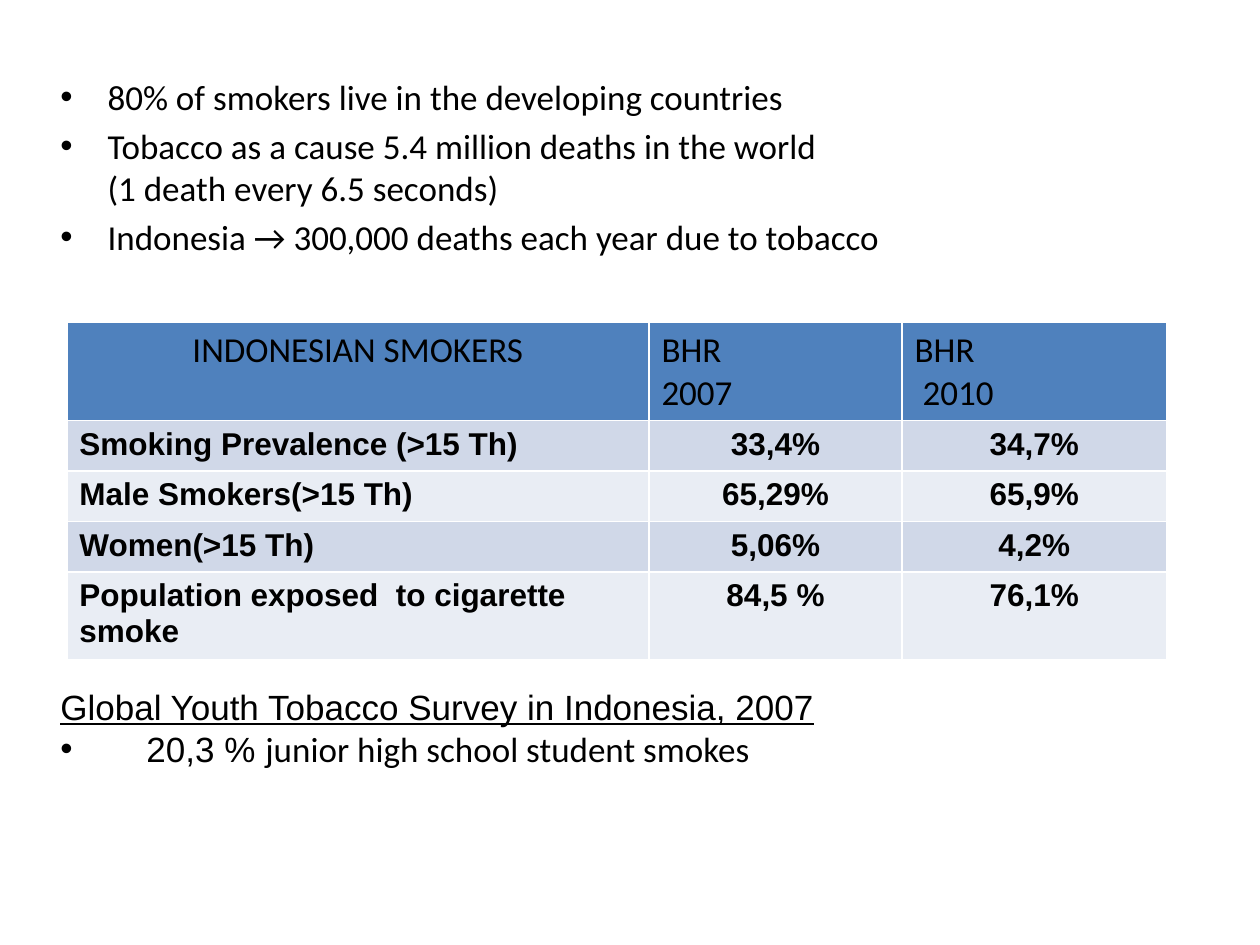
from dataclasses import dataclass

from lxml import etree
from pptx import Presentation
from pptx.dml.color import RGBColor
from pptx.enum import text as t
from pptx.oxml import ns
from pptx.util import Pt


@dataclass(frozen=True)
class Theme:
    ink: str = "000000"
    header: str = "4F81BD"
    bands: tuple = ("D0D8E8", "E9EDF4")
    border: str = "FFFFFF"
    border_width: float = 1
    heading_font: str = "Calibri"
    data_font: str = "Arial"
    body_size: float = 20
    data_size: float = 18
    indent: float = 27


THEME = Theme()
FACTS = (
    "80% of smokers live in the developing countries",
    "Tobacco as a cause 5.4 million deaths in the world\n(1 death every 6.5 seconds)",
    "Indonesia → 300,000 deaths each year due to tobacco",
)
HEADERS = ("INDONESIAN SMOKERS", "BHR\n2007", "BHR\n 2010")
SMOKERS = (
    ("Smoking Prevalence (>15 Th)", "33,4%", "34,7%"),
    ("Male Smokers(>15 Th)", "65,29%", "65,9%"),
    ("Women(>15 Th)", "5,06%", "4,2%"),
    ("Population exposed  to cigarette smoke", "84,5 %", "76,1%"),
)
COLUMN_WIDTHS = (332.6, 144.7, 151.2)
ROW_HEIGHTS = (56, 27.4, 27.4, 27.4, 47.4)


def write(para, text, font=THEME.heading_font, size=THEME.body_size,
          bold=False, underline=False, align=t.PP_ALIGN.LEFT, before=0):
    para.alignment = align
    para.space_before = Pt(before)
    for number, line in enumerate(text.split("\n")):
        if number:
            para.add_line_break()
        span = para.add_run()
        span.text = line
        span.font.name = font
        span.font.size = Pt(size)
        span.font.bold = bold
        span.font.underline = underline
        span.font.color.rgb = RGBColor.from_string(THEME.ink)


def add_bullet(para, indent=THEME.indent):
    props = para._p.get_or_add_pPr()
    props.set("marL", str(Pt(indent)))
    props.set("indent", str(-Pt(indent)))
    etree.SubElement(props, ns.qn("a:buFont")).set("typeface", "Arial")
    etree.SubElement(props, ns.qn("a:buChar")).set("char", "•")


def add_border(cell):
    props = cell._tc.get_or_add_tcPr()
    for position, side in enumerate(("lnL", "lnR", "lnT", "lnB")):
        line = etree.Element(ns.qn(f"a:{side}"), w=str(Pt(THEME.border_width)))
        fill = etree.SubElement(line, ns.qn("a:solidFill"))
        etree.SubElement(fill, ns.qn("a:srgbClr")).set("val", THEME.border)
        props.insert(position, line)


def add_body(page):
    box = page.shapes.add_textbox(Pt(27.4), Pt(39.6), Pt(656), Pt(422))
    frame = box.text_frame
    frame.word_wrap = True
    for number, fact in enumerate(FACTS):
        para = frame.add_paragraph() if number else frame.paragraphs[0]
        write(para, fact, before=4)
        add_bullet(para)

    write(frame.add_paragraph(), "Global Youth Tobacco Survey in Indonesia, 2007",
          font=THEME.data_font, underline=True, before=244.5)
    finding = frame.add_paragraph()
    write(finding, "20,3 % ", font=THEME.data_font)
    write(finding, "junior high school student smokes")
    add_bullet(finding, indent=49.2)


def fill_cell(cell, text, color, **style):
    cell.fill.solid()
    cell.fill.fore_color.rgb = RGBColor.from_string(color)
    add_border(cell)
    frame = cell.text_frame
    for number, line in enumerate(text.split("\n")):
        para = frame.add_paragraph() if number else frame.paragraphs[0]
        write(para, line, **style)


def add_smokers_table(page):
    table = page.shapes.add_table(
        len(ROW_HEIGHTS), len(COLUMN_WIDTHS), Pt(38.2), Pt(184.3),
        Pt(sum(COLUMN_WIDTHS)), Pt(sum(ROW_HEIGHTS))).table
    for column, width in zip(table.columns, COLUMN_WIDTHS):
        column.width = Pt(width)
    for row, height in zip(table.rows, ROW_HEIGHTS):
        row.height = Pt(height)

    for column, header in enumerate(HEADERS):
        align = t.PP_ALIGN.LEFT if column else t.PP_ALIGN.CENTER
        fill_cell(table.cell(0, column), header, THEME.header, align=align)
    for row, values in enumerate(SMOKERS):
        for column, value in enumerate(values):
            align = t.PP_ALIGN.CENTER if column else t.PP_ALIGN.LEFT
            fill_cell(table.cell(row + 1, column), value, THEME.bands[row % 2],
                      font=THEME.data_font, size=THEME.data_size,
                      bold=True, align=align)


def main():
    deck = Presentation()
    deck.slide_width, deck.slide_height = Pt(720), Pt(540)
    page = deck.slides.add_slide(deck.slide_layouts[6])
    add_body(page)
    add_smokers_table(page)
    deck.save("out.pptx")


if __name__ == "__main__":
    main()
